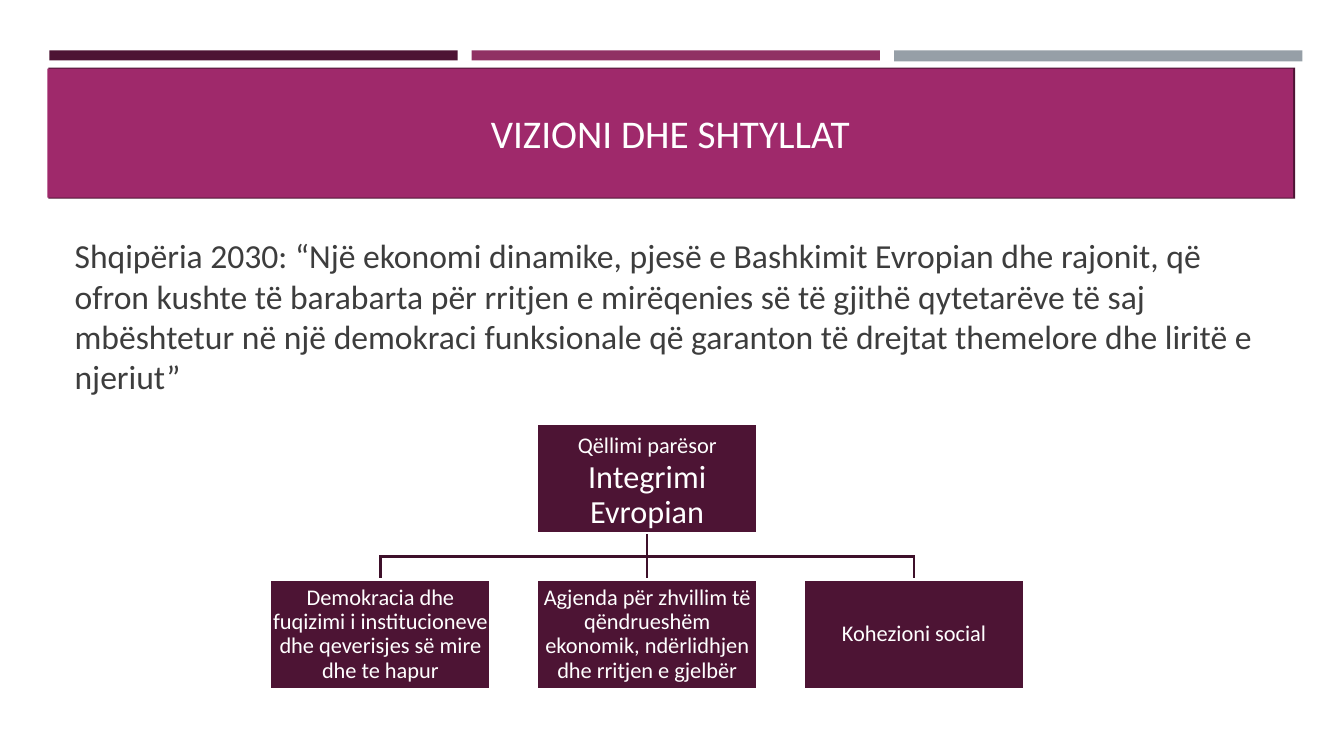
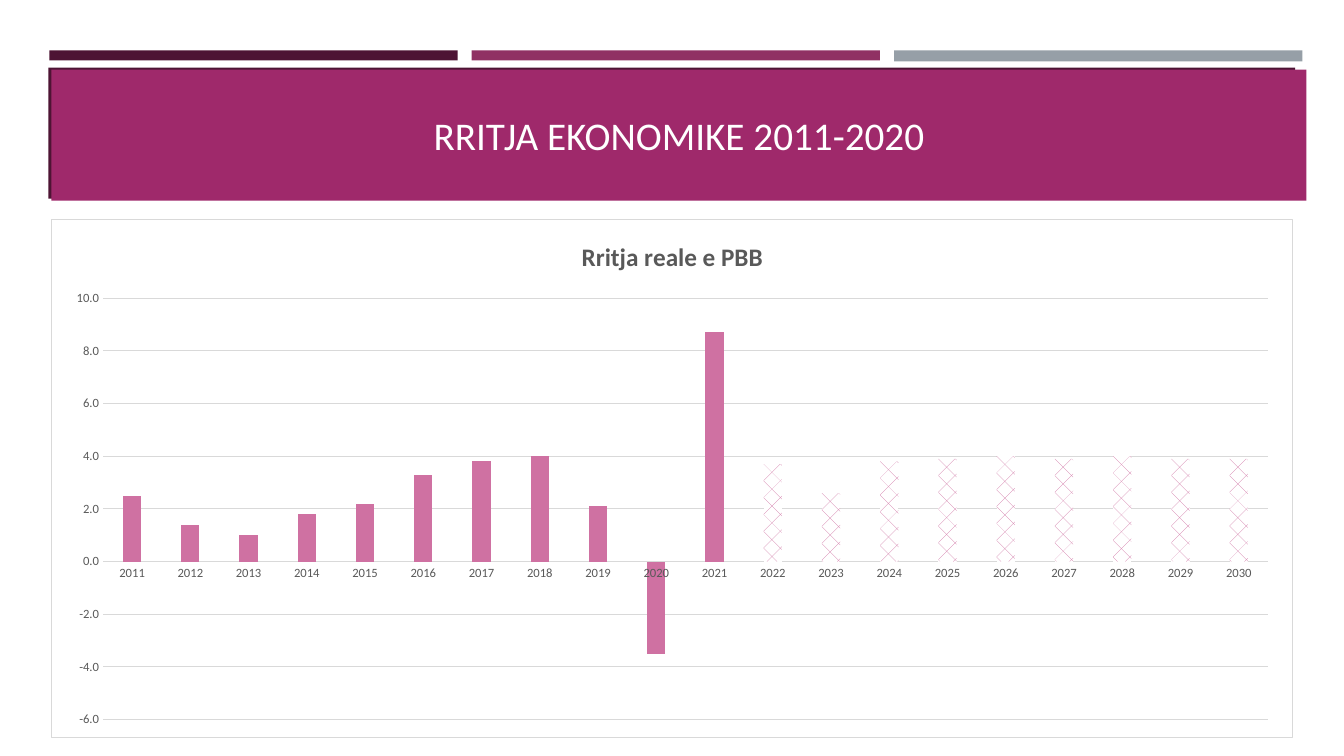
"""Build two slides on Albania's 2030 vision and its economic growth."""
from lxml.etree import SubElement
from pptx import Presentation
from pptx.chart.data import CategoryChartData
from pptx.dml.color import RGBColor
from pptx.enum.chart import XL_CHART_TYPE as ChartType, XL_TICK_MARK as Tick
from pptx.enum.dml import MSO_PATTERN as Pattern
from pptx.enum.shapes import MSO_CONNECTOR as Connector, MSO_SHAPE as Shape
from pptx.enum.text import MSO_ANCHOR as Anchor, MSO_AUTO_SIZE as AutoSize, PP_ALIGN as Align
from pptx.oxml import parse_xml
from pptx.oxml.ns import nsdecls, qn
from pptx.util import Pt

FONT = "Calibri"
HEX = {
    "plum": "4D1434", "berry": "903163", "steel": "969FA7", "magenta": "9F296B",
    "pink": "CF71A2", "branch": "3E102A", "white": "FFFFFF", "body": "3D3D3D",
    "label": "595959", "grid": "D9D9D9",
}
COLOR = {name: RGBColor.from_string(code) for name, code in HEX.items()}


def style_font(font, size, color, bold=False):
    font.name, font.size, font.bold = FONT, Pt(size), bold
    font.color.rgb = COLOR[color]


def add_box(slide, left, top, width, height, fill):
    box = slide.shapes.add_shape(Shape.RECTANGLE, Pt(left), Pt(top), Pt(width), Pt(height))
    box.shadow.inherit = False
    box.fill.solid()
    box.fill.fore_color.rgb = COLOR[fill]
    box.line.fill.background()
    return box


prs = Presentation()
prs.slide_width, prs.slide_height = Pt(960), Pt(540)
vision = prs.slides.add_slide(prs.slide_layouts[1])
growth = prs.slides.add_slide(prs.slide_layouts[5])

bands = [(35.28 + 301.68 * i, 36, 291.6, height, fill) for i, (fill, height) in
         enumerate([("plum", 7.2), ("berry", 7.2), ("steel", 7.92)])]
bands.append((34.56, 48.24, 890.64, 93.6, "plum"))
master_tree = prs.slide_master.shapes.element
for i, band in enumerate(bands):
    element = add_box(vision, *band).element
    element.nvSpPr.cNvPr.set("id", str(100 + i))
    master_tree.insert(2 + i, element)

headings = [
    (vision, "VIZIONI DHE SHTYLLAT", 33.84, 48.96, 889.92, 92.16),
    (growth, "RRITJA EKONOMIKE 2011-2020", 36.72, 49.68, 896.4, 93.6),
]
for slide, heading, left, top, width, height in headings:
    title = slide.shapes.title
    title.left, title.top, title.width, title.height = Pt(left), Pt(top), Pt(width), Pt(height)
    title.fill.solid()
    title.fill.fore_color.rgb = COLOR["magenta"]
    frame = title.text_frame
    frame.auto_size, frame.vertical_anchor = AutoSize.NONE, Anchor.MIDDLE
    frame.paragraphs[0].alignment = Align.CENTER
    run = frame.paragraphs[0].add_run()
    run.text = heading
    style_font(run.font, 28, "white")

statement = vision.placeholders[1]
statement.left, statement.top, statement.width, statement.height = Pt(46.08), Pt(171.36), Pt(877.68), Pt(108.72)
frame = statement.text_frame
frame.auto_size, frame.vertical_anchor = AutoSize.NONE, Anchor.MIDDLE
paragraph = frame.paragraphs[0]
paragraph.space_before, paragraph.space_after = Pt(4.8), Pt(6)
properties = paragraph._p.get_or_add_pPr()
properties.set("marL", "0")
properties.set("indent", "0")
SubElement(properties, qn("a:buNone"))
run = paragraph.add_run()
run.text = ("Shqipëria 2030: “Një ekonomi dinamike, pjesë e Bashkimit Evropian dhe rajonit, "
            "që ofron kushte të barabarta për rritjen e mirëqenies së të gjithë qytetarëve të saj "
            "mbështetur në një demokraci funksionale që garanton të drejtat themelore dhe liritë e njeriut”")
style_font(run.font, 24, "body")

NODE_W, NODE_H, NODE_STEP = 157.5, 78.5, 190.6
GOAL_TOP, PILLAR_TOP = 302.4, 414
pillar_lefts = [193 + NODE_STEP * i for i in range(3)]
centers = [left + NODE_W / 2 for left in pillar_lefts]
goal_bottom = GOAL_TOP + NODE_H
bus = (goal_bottom + PILLAR_TOP) / 2
branches = [
    (centers[1], goal_bottom, centers[1], PILLAR_TOP),
    (centers[0] - 0.87, bus, centers[2] + 0.87, bus),
    (centers[0], bus, centers[0], PILLAR_TOP),
    (centers[2], bus, centers[2], PILLAR_TOP),
]
for ends in branches:
    branch = vision.shapes.add_connector(Connector.STRAIGHT, *[Pt(end) for end in ends])
    branch.line.color.rgb = COLOR["branch"]
    branch.line.width = Pt(1.75)
    SubElement(branch.element.spPr, qn("a:effectLst"))

nodes = [
    (pillar_lefts[1], GOAL_TOP, [("Qëllimi parësor", 16), (" Integrimi Evropian", 23)]),
    (pillar_lefts[0], PILLAR_TOP,
     [("Demokracia dhe fuqizimi i institucioneve dhe qeverisjes së mire dhe te hapur", 16)]),
    (pillar_lefts[1], PILLAR_TOP,
     [("Agjenda për zhvillim të qëndrueshëm ekonomik, ndërlidhjen dhe rritjen e gjelbër", 16)]),
    (pillar_lefts[2], PILLAR_TOP, [("Kohezioni social", 16)]),
]
for left, top, wording in nodes:
    node = add_box(vision, left, top, NODE_W, NODE_H, "plum")
    node.line.color.rgb = COLOR["white"]
    node.line.width = Pt(1.75)
    frame = node.text_frame
    frame.word_wrap, frame.vertical_anchor = True, Anchor.MIDDLE
    frame.margin_left = frame.margin_right = frame.margin_top = frame.margin_bottom = Pt(0.72)
    paragraph = frame.paragraphs[0]
    paragraph.alignment, paragraph.line_spacing = Align.CENTER, 0.9
    for words, size in wording:
        run = paragraph.add_run()
        run.text = words
        style_font(run.font, size, "white")

gdp_growth = CategoryChartData(number_format="0.0")
gdp_growth.categories = [str(year) for year in range(2011, 2031)]
gdp_growth.add_series("Series 1", [2.5, 1.4, 1, 1.8, 2.2, 3.3, 3.8, 4, 2.1, -3.5,
                                   8.7, 3.7, 2.6, 3.8, 3.9, 4, 3.9, 4, 3.9, 3.9])
chart = growth.shapes.add_chart(ChartType.COLUMN_CLUSTERED, Pt(36.72), Pt(156.24),
                                Pt(887.04), Pt(370.8), gdp_growth).chart
chart.font.name, chart.font.size = FONT, Pt(10)
chart.has_legend = False
chart.has_title = True
run = chart.chart_title.text_frame.paragraphs[0].add_run()
run.text = "Rritja reale e PBB"
style_font(run.font, 18, "label", bold=True)
chart.chart_title.include_in_layout = False
chart.element.find(qn("c:chart")).addnext(parse_xml(
    f'<c:spPr {nsdecls("c", "a")}><a:solidFill><a:srgbClr val="{HEX["white"]}"/></a:solidFill>'
    f'<a:ln w="9525"><a:solidFill><a:srgbClr val="{HEX["grid"]}"/></a:solidFill></a:ln></c:spPr>'))

years, rates = chart.category_axis, chart.value_axis
for axis in (years, rates):
    axis.major_tick_mark = axis.minor_tick_mark = Tick.NONE
    style_font(axis.tick_labels.font, 9, "label")
rates.minimum_scale, rates.maximum_scale, rates.major_unit = -6, 10, 2
rates.tick_labels.number_format = "0.0"
rates.tick_labels.number_format_is_linked = False
rates.format.line.fill.background()
for rule in (years.format.line, rates.major_gridlines.format.line):
    rule.color.rgb = COLOR["grid"]
    rule.width = Pt(0.75)

columns = chart.plots[0]
columns.gap_width, columns.overlap, columns.vary_by_categories = 219, -27, False
rate_series = columns.series[0]
rate_series.invert_if_negative = False
rate_series.format.fill.solid()
rate_series.format.fill.fore_color.rgb = COLOR["pink"]
for forecast in range(11, 20):
    fill = rate_series.points[forecast].format.fill
    fill.patterned()
    fill.pattern = Pattern.DIAGONAL_BRICK
    fill.fore_color.rgb = COLOR["pink"]
    fill.back_color.rgb = COLOR["white"]

prs.save("out.pptx")
